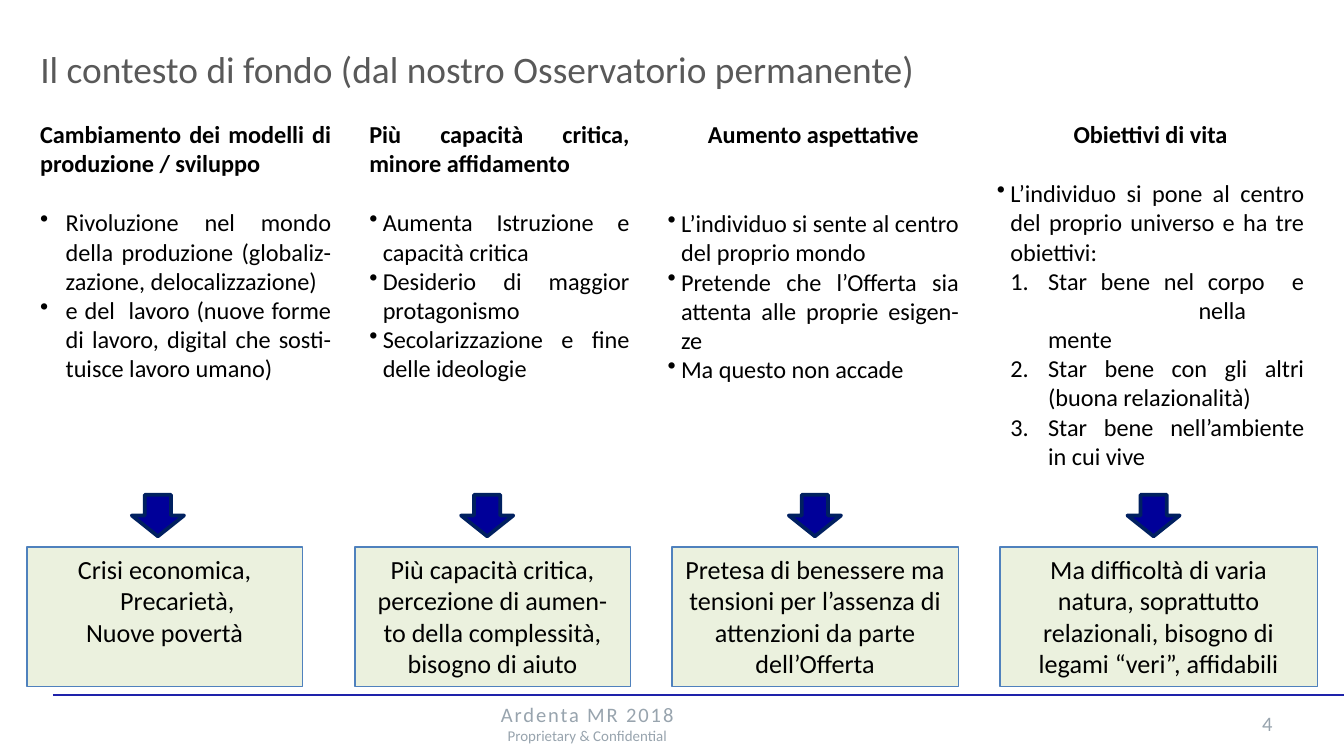
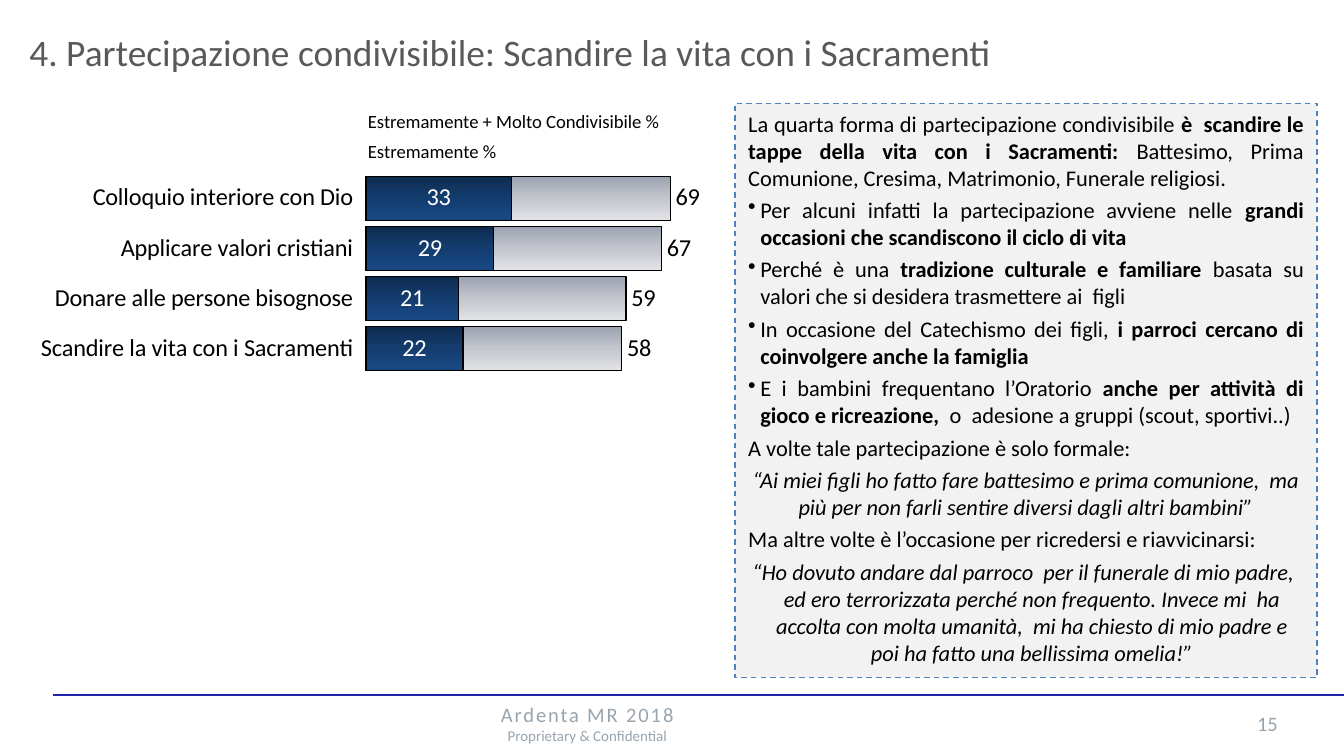
from copy import deepcopy
from pptx import Presentation
from pptx.chart.data import CategoryChartData
from pptx.dml.color import RGBColor
from pptx.enum.chart import XL_CHART_TYPE, XL_LABEL_POSITION
from pptx.enum.dml import MSO_LINE
from pptx.enum.shapes import MSO_CONNECTOR, MSO_SHAPE
from pptx.enum.text import MSO_ANCHOR, MSO_AUTO_SIZE, PP_ALIGN
from pptx.oxml import parse_xml
from pptx.oxml.ns import nsdecls, qn
from pptx.oxml.xmlchemy import OxmlElement
from pptx.util import Pt

FONT = "Calibri"
HEX = {"black": "000000", "white": "FFFFFF", "title": "595959", "foot": "98A4AE",
       "rule": "1E22AA", "green": "EBF1DE", "grey": "F2F2F2", "edge": "4F81BD",
       "arrow": "000099", "navy": "002060"}
RGB = {name: RGBColor.from_string(code) for name, code in HEX.items()}
LEFT, MID, JUST = PP_ALIGN.LEFT, PP_ALIGN.CENTER, PP_ALIGN.JUSTIFY


def write(frame, text, size, align=LEFT, color="black", mark="", hang=0,
          edge=None, before=0, italic=False, tab=0):
    """Add a paragraph: * toggles bold, a newline breaks the line, mark is a bullet."""
    par = frame.paragraphs[0]
    if par.runs:
        par = frame.add_paragraph()
    props = par._p.get_or_add_pPr()
    if hang:
        props.set("marL", str(Pt(hang if edge is None else edge)))
        props.set("indent", str(-Pt(hang)))
    if mark:
        item = OxmlElement("a:buAutoNum" if mark == "1." else "a:buChar")
        if mark == "1.":
            item.set("type", "arabicPeriod")
        else:
            item.set("char", mark)
        props.append(item)
    if tab:
        stops = OxmlElement("a:tabLst")
        stop = OxmlElement("a:tab")
        stop.set("pos", str(Pt(tab)))
        stop.set("algn", "l")
        stops.append(stop)
        props.append(stops)
    par.alignment = align
    par.space_before = Pt(before)
    for i, part in enumerate(text.split("*")):
        for j, line in enumerate(part.split("\n")):
            if j:
                par.add_line_break()
                par._p[-1].append(deepcopy(par.runs[-1]._r.rPr))
            if not line:
                continue
            run = par.add_run()
            run.text = line
            font = run.font
            font.name, font.size = FONT, Pt(size)
            font.bold, font.italic = i % 2 == 1, italic
            font.color.rgb = RGB[color]
    return par


def place(slide, x, y, w, h, kind=None, fill=None, line=None, width=0.75):
    """Add a text box, or a filled shape when a kind is given."""
    area = [Pt(n) for n in (x, y, w, h)]
    if kind is None:
        shape = slide.shapes.add_textbox(*area)
    else:
        shape = slide.shapes.add_shape(kind, *area)
        shape.shadow.inherit = False
        shape.fill.solid()
        shape.fill.fore_color.rgb = RGB[fill]
        shape.line.color.rgb = RGB[line]
        shape.line.width = Pt(width)
    shape.text_frame.word_wrap = True
    shape.text_frame.vertical_anchor = MSO_ANCHOR.TOP
    return shape


deck = Presentation()
deck.slide_width, deck.slide_height = Pt(720), Pt(405)

# Shared title, footer and rule
heads = [
    ("Il contesto di fondo (dal nostro Osservatorio permanente)", "4", 14.4, 20.9, 652),
    ("4. Partecipazione condivisibile: Scandire la vita con i Sacramenti", "15", 8.6, 12.2, 544),
]
slides = []
for text, page, x, y, w in heads:
    slide = deck.slides.add_slide(deck.slide_layouts[5])
    title = slide.shapes.title
    title.left, title.top, title.width, title.height = Pt(x), Pt(y), Pt(w), Pt(31.5)
    frame = title.text_frame
    frame.auto_size = MSO_AUTO_SIZE.NONE
    frame.vertical_anchor = MSO_ANCHOR.TOP
    write(frame, text, 20, color="title")

    num = place(slide, 643.7, 377.3, 70.6, 16)
    write(num.text_frame, page, 11, MID, "foot")
    foot = place(slide, 133.2, 378, 363, 18.7).text_frame
    foot.vertical_anchor = MSO_ANCHOR.MIDDLE
    par = write(foot, "Ardenta MR 2018", 11, MID, "foot")
    par.runs[0].font._element.set("spc", "100")
    write(foot, "Proprietary & Confidential", 8, MID, "foot")

    rule = slide.shapes.add_connector(MSO_CONNECTOR.STRAIGHT, Pt(28.3), Pt(372.4), Pt(720), Pt(372.4))
    rule.line.color.rgb = RGB["rule"]
    rule.line.width = Pt(0.75)
    rule._element.spPr.append(OxmlElement("a:effectLst"))
    slides.append(slide)
context, rites = slides

# Four trends: x, width, heading, alignment, gap, hang, bullets
trends = [
    (14.4, 170, "Cambiamento dei modelli di produzione / sviluppo", JUST, 16, 13.7, [
        "Rivoluzione nel mondo della produzione (globaliz-zazione, delocalizzazione)",
        "e del  lavoro (nuove forme di lavoro, digital che sosti-tuisce lavoro umano)"]),
    (190.8, 153.4, "Più capacità critica, minore affidamento", JUST, 16, 7.2, [
        "Aumenta Istruzione e capacità critica",
        "Desiderio di maggior protagonismo",
        "Secolarizzazione e fine delle ideologie"]),
    (350.6, 170, "Aumento aspettative", MID, 32, 7.2, [
        "L’individuo si sente al centro del proprio mondo",
        "Pretende che l’Offerta sia attenta alle proprie esigen-ze",
        "Ma questo non accade"]),
    (527, 178.6, "Obiettivi di vita", MID, 16, 7.2, [
        "L’individuo si pone al centro del proprio universo e ha tre obiettivi:"]),
]
for x, w, head, align, gap, hang, points in trends:
    frame = place(context, x, 60.5, w, 165).text_frame
    write(frame, f"*{head}*", 13, align)
    for i, point in enumerate(points):
        write(frame, point, 13, JUST, mark="•", hang=hang, before=0 if i else gap)
goals = ["Star bene nel corpo  e\n\tnella\nmente",
         "Star bene con gli altri (buona relazionalità)",
         "Star bene nell’ambiente in cui vive"]
for goal in goals:
    write(frame, goal, 13, JUST, mark="1.", hang=20.2, edge=27.4,
          tab=108 if "\t" in goal else 0)

# Outcomes: arrow x, box x, width, indent, paragraphs
ends = [
    (70.6, 14.4, 147.6, 13.7, ["Crisi economica, Precarietà,", "Nuove povertà"]),
    (247, 190.1, 147.6, 0,
     ["Più capacità critica, percezione di aumen-to della complessità, bisogno di aiuto"]),
    (422.6, 360, 153.4, 0,
     ["Pretesa di benessere ma tensioni per l’assenza di attenzioni da parte dell’Offerta"]),
    (604, 535.7, 170, 0,
     ["Ma difficoltà di varia natura, soprattutto relazionali, bisogno di legami “veri”, affidabili"]),
]
for tip, x, w, hang, lines in ends:
    box = place(context, x, 293, w, 75, MSO_SHAPE.RECTANGLE, "green", "edge")
    for line in lines:
        write(box.text_frame, line, 14, MID, hang=hang)
    place(context, tip, 265, 28, 22.3, MSO_SHAPE.DOWN_ARROW, "arrow", "navy", 2)

# Bar chart: the total behind, the top score in front
blank = 6
data = CategoryChartData(number_format="0")
data.categories = ["Colloquio interiore con Dio", "Applicare valori cristiani",
                   "Donare alle persone bisognose", "Scandire la vita con i Sacramenti"] + [""] * blank
data.add_series("Series 1", [69, 67, 59, 58] + [None] * blank)
data.add_series("Series 2", [33, 29, 21, 22] + [None] * blank)
chart = rites.shapes.add_chart(XL_CHART_TYPE.BAR_CLUSTERED, Pt(0), Pt(77.8),
                               Pt(402.5), Pt(290.2), data).chart
chart.has_legend = chart.has_title = False
chart.font.name, chart.font.size = FONT, Pt(18)
chart.font.color.rgb = RGB["black"]
cats, vals = chart.category_axis, chart.value_axis
cats.reverse_order = True
cats.format.line.fill.background()
cats.tick_labels.font.size = Pt(13)
cats.tick_labels.font.name = FONT
vals.visible = vals.has_major_gridlines = False
vals.minimum_scale, vals.maximum_scale = 0, 80
plot = chart.plots[0]
plot.gap_width, plot.overlap, plot.vary_by_categories = 14, 100, False

looks = [
    (["9CA2B0", "C4C6CE", "E2E3E7"], "black", XL_LABEL_POSITION.OUTSIDE_END, "0"),
    (["0E2B4E", "143D6F", "184884"], "white", XL_LABEL_POSITION.CENTER, "#,##0"),
]
for bars, (shades, ink, spot, form) in zip(plot.series, looks):
    fill = bars.format.fill
    fill.gradient()
    fill.gradient_angle = 270
    steps = bars._element.find(".//" + qn("a:gsLst"))
    steps.insert(1, deepcopy(steps[0]))
    for i, (stop, shade) in enumerate(zip(fill.gradient_stops, shades)):
        stop.color.rgb = RGBColor.from_string(shade)
        stop.position = i / 2
    bars.format.line.color.rgb = RGB["black"]
    bars.format.line.width = Pt(0.75)
    tags = bars.data_labels
    tags.show_value, tags.position = True, spot
    tags.number_format, tags.number_format_is_linked = form, False
    tags.font.name, tags.font.size = FONT, Pt(13)
    tags.font.color.rgb = RGB[ink]

area = chart._chartSpace.chart.plotArea
for old in area.findall(qn("c:layout")):
    area.remove(old)
rows = [("layoutTarget", "inner"), ("xMode", "edge"), ("yMode", "edge"),
        ("x", 0.487), ("y", 0.052), ("w", 0.47), ("h", 0.924)]
inner = "".join(f'<c:{name} val="{value}"/>' for name, value in rows)
area.insert(0, parse_xml(f'<c:layout {nsdecls("c")}><c:manualLayout>{inner}</c:manualLayout></c:layout>'))

for y, w, text in [(55.4, 187.2, "Estremamente + Molto Condivisibile %"), (71.3, 85, "Estremamente %")]:
    write(place(rites, 190, y, w, 19.4).text_frame, text, 10)

# Comment panel: text, alignment, bullet, indent, italic
notes = [
    ("La quarta forma di partecipazione condivisibile *è  scandire le tappe della vita con i "
     "Sacramenti:* Battesimo, Prima Comunione, Cresima, Matrimonio, Funerale religiosi.", JUST, "", 0, False),
    ("Per alcuni infatti la partecipazione avviene nelle *grandi occasioni che scandiscono "
     "il ciclo di vita*", JUST, "•", 6.5, False),
    ("Perché è una *tradizione culturale e familiare *basata su valori che si desidera "
     "trasmettere ai  figli", JUST, "•", 6.5, False),
    ("In occasione del Catechismo dei figli, *i parroci cercano di coinvolgere anche la "
     "famiglia*", JUST, "•", 6.5, False),
    ("E i bambini frequentano l’Oratorio *anche per attività di gioco e ricreazione,*  o  "
     "adesione a gruppi (scout, sportivi..)", JUST, "•", 6.5, False),
    ("A volte tale partecipazione è solo formale:", JUST, "", 6.5, False),
    ("“Ai miei figli ho fatto fare battesimo e prima comunione,  ma più per non farli "
     "sentire diversi dagli altri bambini”", MID, "", 0, True),
    ("Ma altre volte è l’occasione per ricredersi e riavvicinarsi:", JUST, "", 6.5, False),
    ("“Ho dovuto andare dal parroco  per il funerale di mio padre,  ed ero terrorizzata perché "
     "non frequento. Invece mi  ha accolta con molta umanità,  mi ha chiesto di mio padre e poi "
     "ha fatto una bellissima omelia!”", MID, "", 6.5, True),
]
panel = place(rites, 393.8, 55.4, 311.8, 307.5, MSO_SHAPE.RECTANGLE, "grey", "edge")
panel.line.dash_style = MSO_LINE.DASH
for i, (text, align, mark, hang, italic) in enumerate(notes):
    write(panel.text_frame, text, 12, align, mark=mark, hang=hang, before=3 if i else 0, italic=italic)

deck.save("out.pptx")
